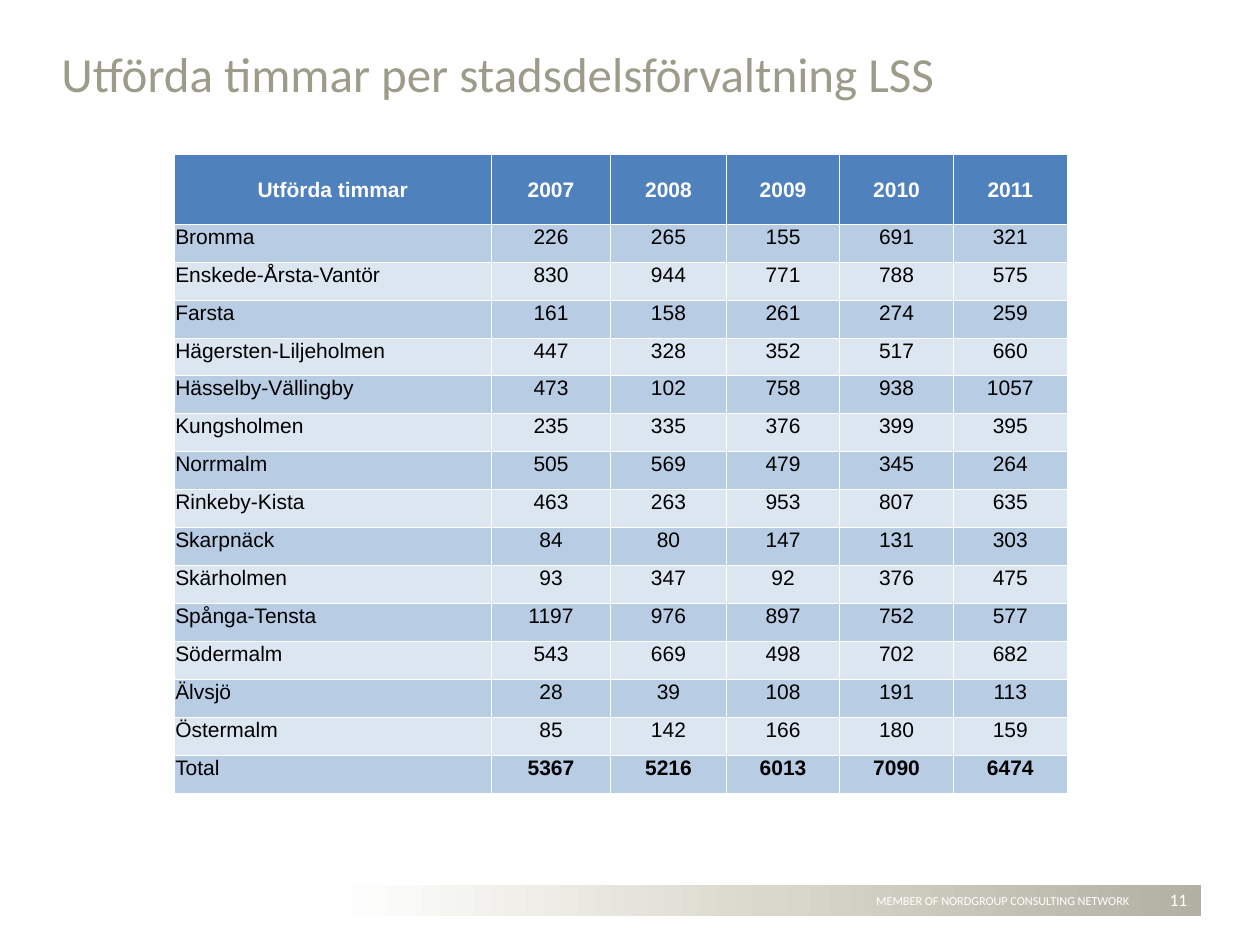
from copy import deepcopy

from pptx import Presentation
from pptx.dml.color import RGBColor
from pptx.enum.shapes import MSO_SHAPE as Shape
from pptx.enum.text import MSO_ANCHOR as Anchor, PP_ALIGN as Align
from pptx.oxml import parse_xml
from pptx.oxml.ns import nsdecls, qn
from pptx.util import Pt

COLORS = {
    "title": "9D9B8A",
    "white": "FFFFFF",
    "black": "000000",
    "header": "4F81BD",
    "band_dark": "B8CCE4",
    "band_light": "DCE6F1",
    "bar_dark": "B2B0A2",
    "bar_mid": "DAD8CC",
}

YEARS = ["2007", "2008", "2009", "2010", "2011"]
HOURS = [
    ("Bromma", 226, 265, 155, 691, 321),
    ("Enskede-Årsta-Vantör", 830, 944, 771, 788, 575),
    ("Farsta", 161, 158, 261, 274, 259),
    ("Hägersten-Liljeholmen", 447, 328, 352, 517, 660),
    ("Hässelby-Vällingby", 473, 102, 758, 938, 1057),
    ("Kungsholmen", 235, 335, 376, 399, 395),
    ("Norrmalm", 505, 569, 479, 345, 264),
    ("Rinkeby-Kista", 463, 263, 953, 807, 635),
    ("Skarpnäck", 84, 80, 147, 131, 303),
    ("Skärholmen", 93, 347, 92, 376, 475),
    ("Spånga-Tensta", 1197, 976, 897, 752, 577),
    ("Södermalm", 543, 669, 498, 702, 682),
    ("Älvsjö", 28, 39, 108, 191, 113),
    ("Östermalm", 85, 142, 166, 180, 159),
    ("Total", 5367, 5216, 6013, 7090, 6474),
]
COLUMN_WIDTHS = [181.5, 68, 66.3, 64.7, 65, 65]
HEADER_HEIGHT, ROW_HEIGHT, SHORT_ROW_HEIGHT = 39.6, 21.75, 21
SHORT_ROW = 4


def rgb(name):
    return RGBColor.from_string(COLORS[name])


def write(frame, text, size=12, font="Arial", color="black", bold=False, align=Align.LEFT):
    paragraph = frame.paragraphs[0]
    paragraph.alignment = align
    run = paragraph.add_run()
    run.text = text
    run.font.size = Pt(size)
    run.font.name = font
    run.font.bold = bold
    run.font.color.rgb = rgb(color)


def add_label(slide, text, left, top, width, height, anchor=Anchor.TOP, wrap=True, **style):
    frame = slide.shapes.add_textbox(Pt(left), Pt(top), Pt(width), Pt(height)).text_frame
    frame.word_wrap = wrap
    frame.vertical_anchor = anchor
    write(frame, text, font="Calibri", **style)


def add_gradient_bar(slide, left, top, width, height, stops):
    bar = slide.shapes.add_shape(Shape.RECTANGLE, Pt(left), Pt(top), Pt(width), Pt(height))
    bar.shadow.inherit = False
    bar.line.fill.background()
    bar.fill.gradient()
    bar.fill.gradient_angle = 180
    stop_list = bar._element.spPr.find(".//" + qn("a:gsLst"))
    stop_list.insert(1, deepcopy(stop_list[0]))
    for stop, (position, color) in zip(bar.fill.gradient_stops, stops):
        stop.position = position
        stop.color.rgb = rgb(color)


def add_borders(cell, color="white", width=0.5):
    properties = cell._tc.get_or_add_tcPr()
    for index, side in enumerate("LRTB"):
        properties.insert(index, parse_xml(
            f'<a:ln{side} {nsdecls("a")} w="{Pt(width)}"><a:solidFill>'
            f'<a:srgbClr val="{COLORS[color]}"/></a:solidFill></a:ln{side}>'))


def fill_cell(cell, text, fill, anchor=Anchor.TOP, **style):
    cell.margin_left = cell.margin_right = cell.margin_top = Pt(0.75)
    cell.margin_bottom = 0
    cell.vertical_anchor = anchor
    cell.fill.solid()
    cell.fill.fore_color.rgb = rgb(fill)
    add_borders(cell)
    write(cell.text_frame, text, **style)


def add_hours_table(slide, left, top):
    heights = [HEADER_HEIGHT] + [ROW_HEIGHT] * len(HOURS)
    heights[SHORT_ROW] = SHORT_ROW_HEIGHT
    table = slide.shapes.add_table(
        len(heights), len(COLUMN_WIDTHS), Pt(left), Pt(top),
        Pt(sum(COLUMN_WIDTHS)), Pt(sum(heights))).table
    table.horz_banding = False
    for column, width in zip(table.columns, COLUMN_WIDTHS):
        column.width = Pt(width)
    for row, height in zip(table.rows, heights):
        row.height = Pt(height)

    for col, heading in enumerate(["Utförda timmar"] + YEARS):
        fill_cell(table.cell(0, col), heading, "header", anchor=Anchor.MIDDLE,
                  color="white", bold=True, align=Align.CENTER)
    for row, record in enumerate(HOURS, 1):
        band = "band_dark" if row % 2 else "band_light"
        for col, value in enumerate(record):
            fill_cell(table.cell(row, col), str(value), band,
                      bold=row == len(HOURS) and col > 0,
                      align=Align.CENTER if col else Align.LEFT)


def main():
    deck = Presentation()
    deck.slide_width, deck.slide_height = Pt(720), Pt(540)
    slide = deck.slides.add_slide(deck.slide_layouts[6])

    add_gradient_bar(slide, 191.5, 505.5, 495, 18,
                     [(0, "bar_dark"), (0.5, "bar_mid"), (1, "white")])
    add_label(slide, "MEMBER OF NORDGROUP CONSULTING NETWORK", 479, 507, 188, 16,
              wrap=False, size=7, color="white", align=Align.CENTER)
    add_label(slide, "Utförda timmar per stadsdelsförvaltning LSS", 28, 5, 597, 57,
              anchor=Anchor.BOTTOM, size=28, color="title")
    add_label(slide, "11", 652.5, 505, 33, 18, anchor=Anchor.MIDDLE,
              size=10, color="white", align=Align.RIGHT)
    add_hours_table(slide, 99.4, 88.5)

    deck.save("out.pptx")


if __name__ == "__main__":
    main()
